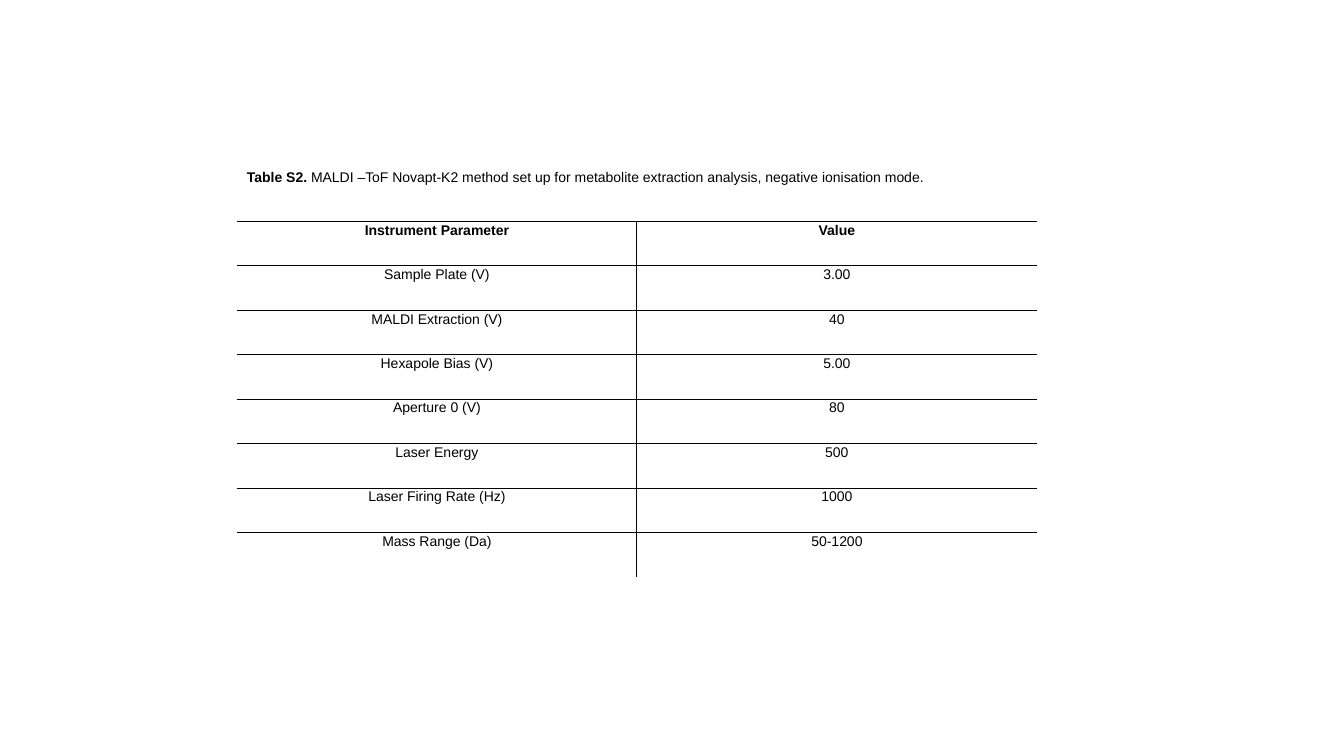
from lxml.etree import SubElement
from pptx import Presentation
from pptx.dml.color import RGBColor
from pptx.enum.text import MSO_ANCHOR as Anchor, MSO_AUTO_SIZE as Fit, PP_ALIGN as Align
from pptx.oxml.ns import qn
from pptx.util import Cm, Pt

TITLE = [
    ("Table S2. ", True),
    ("MALDI –ToF Novapt-K2 method set up for metabolite extraction analysis, "
     "negative ionisation mode.", False),
]
ROWS = [
    ("Instrument Parameter", "Value"),
    ("Sample Plate (V)", "3.00"),
    ("MALDI Extraction (V)", "40"),
    ("Hexapole Bias (V)", "5.00"),
    ("Aperture 0 (V)", "80"),
    ("Laser Energy", "500"),
    ("Laser Firing Rate (Hz)", "1000"),
    ("Mass Range (Da)", "50-1200"),
]
INK = "000000"
LEFT, TOP = 5.97, 5.58
WIDE, HIGH = 10.08, 1.12


def color(code):
    return RGBColor.from_string(code)


def add_run(para, text, bold):
    run = para.add_run()
    run.text = text
    font = run.font
    font.name, font.size, font.bold = "Arial", Pt(10), bold
    font.color.rgb = color(INK)


def rule(cell, side, shown):
    line = SubElement(cell._tc.get_or_add_tcPr(), qn(f"a:ln{side}"), w=str(Pt(1)))
    if shown:
        fill = SubElement(line, qn("a:solidFill"))
        SubElement(fill, qn("a:srgbClr"), val=str(color(INK)))
    else:
        SubElement(line, qn("a:noFill"))


def add_title(slide):
    title = slide.shapes.title
    title.left, title.top = Cm(LEFT), Cm(4.11)
    title.width, title.height = Cm(19.33), Cm(0.68)
    frame = title.text_frame
    frame.word_wrap = True
    frame.auto_size = Fit.SHAPE_TO_FIT_TEXT
    frame.vertical_anchor = Anchor.TOP
    para = frame.paragraphs[0]
    para.alignment = Align.LEFT
    for text, bold in TITLE:
        add_run(para, text, bold)


def add_grid(slide):
    count, span = len(ROWS), len(ROWS[0])
    table = slide.shapes.add_table(
        count, span, Cm(LEFT), Cm(TOP), Cm(WIDE * span), Cm(HIGH * count)).table
    table.first_row = table.horz_banding = False
    for r, row in enumerate(ROWS):
        for c, text in enumerate(row):
            cell = table.cell(r, c)
            cell.margin_left = cell.margin_right = Cm(0.18)
            cell.margin_top = cell.margin_bottom = 0
            para = cell.text_frame.paragraphs[0]
            para.alignment = Align.CENTER
            para.line_spacing = 1.07
            add_run(para, text, r == 0)
            rule(cell, "L", c > 0)
            rule(cell, "R", c < span - 1)
            rule(cell, "T", True)
            rule(cell, "B", r < count - 1)
            cell.fill.background()


def main():
    deck = Presentation()
    deck.slide_width, deck.slide_height = Cm(33.87), Cm(19.05)
    slide = deck.slides.add_slide(deck.slide_layouts[5])
    add_grid(slide)
    add_title(slide)
    deck.save("out.pptx")


if __name__ == "__main__":
    main()
